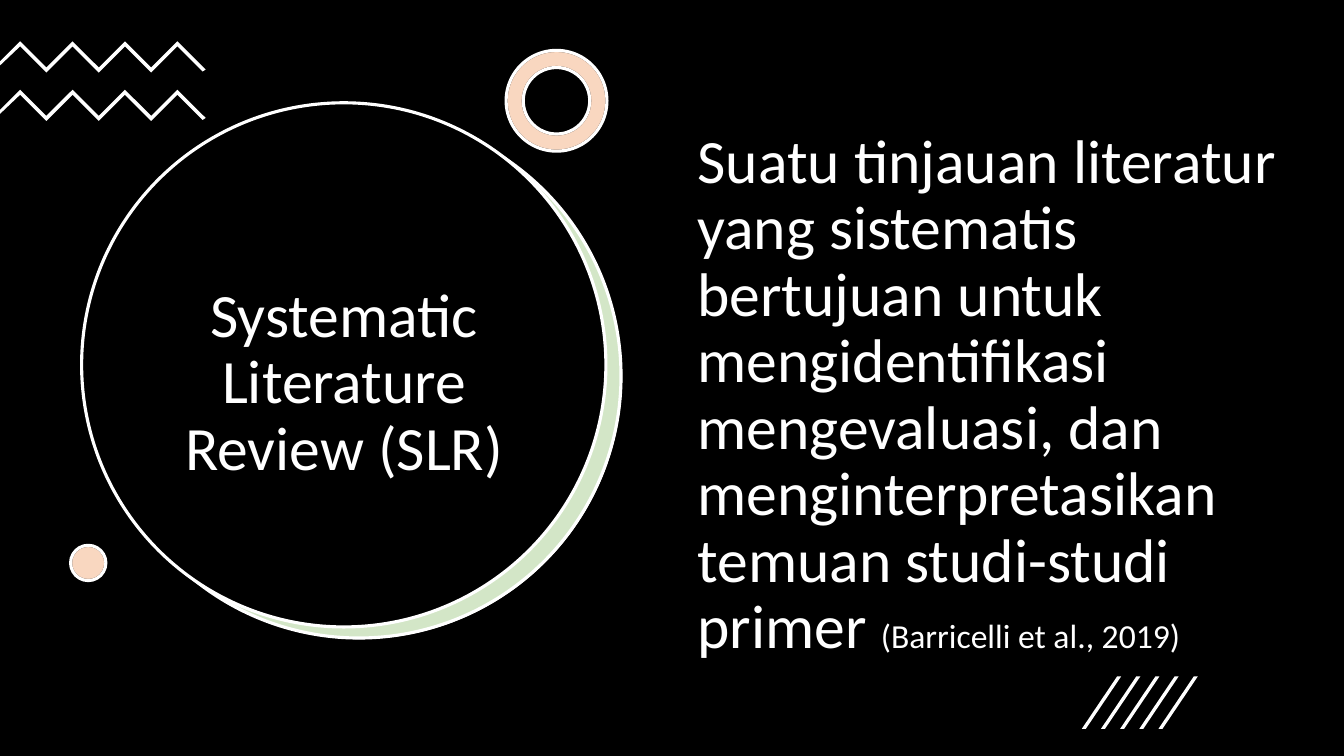
from lxml.etree import SubElement
from pptx import Presentation
from pptx.dml.color import RGBColor
from pptx.enum.shapes import MSO_SHAPE
from pptx.enum.text import MSO_ANCHOR, MSO_AUTO_SIZE, PP_ALIGN
from pptx.oxml.ns import qn
from pptx.util import Inches, Pt

BLACK = RGBColor(0x00, 0x00, 0x00)
WHITE = RGBColor(0xFF, 0xFF, 0xFF)
GREEN = RGBColor(0x70, 0xAD, 0x47)
ORANGE = RGBColor(0xED, 0x7D, 0x31)


def add_text(paragraph, text, font="Calibri", size=44, color=WHITE):
    run = paragraph.add_run()
    run.text = text
    run.font.name = font
    run.font.size = Pt(size)
    run.font.color.rgb = color


class SlideBuilder:
    line_width = Pt(2.25)
    line_spacing = 0.9

    def __init__(self, presentation):
        self.slide = presentation.slides.add_slide(presentation.slide_layouts[5])
        background = self.slide.background.fill
        background.solid()
        background.fore_color.rgb = BLACK

    def paint(self, shape, fill, line=None, opacity=None):
        shape.shadow.inherit = False
        shape.fill.solid()
        shape.fill.fore_color.rgb = fill
        if opacity is not None:
            color = shape._element.spPr.find(qn("a:solidFill"))[0]
            SubElement(color, qn("a:alpha"), val=str(opacity * 1000))
        if line is None:
            shape.line.fill.background()
        else:
            shape.line.color.rgb = line
            shape.line.width = self.line_width

    def round_shape(self, kind, left, top, size, fill, line=None, opacity=None, ring=None):
        shape = self.slide.shapes.add_shape(
            kind, Inches(left), Inches(top), Inches(size), Inches(size))
        if ring is not None:
            shape.adjustments[0] = ring
        self.paint(shape, fill, line, opacity)

    def tinted_shape(self, kind, left, top, size, tint, ring=None):
        self.round_shape(kind, left, top, size, WHITE, BLACK, ring=ring)
        self.round_shape(kind, left, top, size, tint, WHITE, 30, ring)

    def outline_group(self, outlines):
        group = self.slide.shapes.add_group_shape()
        for outline in outlines:
            points = [(Inches(x), Inches(y)) for x, y in outline]
            builder = group.shapes.build_freeform(*points[0])
            builder.add_line_segments(points[1:], close=True)
            self.paint(builder.convert_to_shape(), WHITE)

    def format_box(self, shape, left, top, width, height, anchor, alignment):
        shape.left, shape.top = Inches(left), Inches(top)
        shape.width, shape.height = Inches(width), Inches(height)
        frame = shape.text_frame
        frame.word_wrap = True
        frame.auto_size = MSO_AUTO_SIZE.NONE
        frame.vertical_anchor = anchor
        paragraph = frame.paragraphs[0]
        paragraph.alignment = alignment
        paragraph.line_spacing = self.line_spacing
        return paragraph

    def title(self, text, *box):
        shape = self.slide.shapes.title
        shape._element.getparent().append(shape._element)
        paragraph = self.format_box(shape, *box, MSO_ANCHOR.MIDDLE, PP_ALIGN.CENTER)
        add_text(paragraph, text)

    def body(self, text, citation, *box):
        shape = self.slide.shapes.add_textbox(0, 0, 0, 0)
        paragraph = self.format_box(shape, *box, MSO_ANCHOR.TOP, PP_ALIGN.LEFT)
        add_text(paragraph, text)
        add_text(paragraph, citation, size=24)


def zigzag(top):
    ridge = [(0.2 + 0.26 * i, top + 0.26 * (i % 2)) for i in range(7)]
    underside = [(x, y + 0.05) for x, y in reversed(ridge)]
    right_end = [(2.04, top + 0.28), (2.01, top + 0.3)]
    left_end = [(0, top + 0.24), (0, top + 0.2)]
    return ridge + right_end + underside + left_end


def slash(left):
    return [(left + 0.04, 7.23), (left, 7.23), (left + 0.35, 6.71), (left + 0.39, 6.71)]


def main():
    presentation = Presentation()
    presentation.slide_width = Inches(13.33)
    presentation.slide_height = Inches(7.5)

    builder = SlideBuilder(presentation)
    builder.round_shape(MSO_SHAPE.OVAL, 0.97, 1.14, 5.2, WHITE)
    builder.round_shape(MSO_SHAPE.OVAL, 0.96, 1.13, 5.2, GREEN, WHITE, 30)
    builder.round_shape(MSO_SHAPE.OVAL, 0.81, 1.02, 5.2, BLACK, WHITE)
    builder.title("Systematic Literature Review (SLR)", 1.21, 2.05, 4.41, 3.52)
    builder.outline_group(zigzag(top) for top in (0.41, 0.89))
    builder.tinted_shape(MSO_SHAPE.DONUT, 5.02, 0.5, 1, ORANGE, ring=0.17)
    builder.tinted_shape(MSO_SHAPE.OVAL, 0.7, 5.41, 0.35, ORANGE)
    builder.body(
        "Suatu tinjauan literatur yang sistematis bertujuan untuk mengidentifikasi "
        "mengevaluasi, dan menginterpretasikan temuan studi-studi primer ",
        "(Barricelli et al., 2019)", 6.82, 1.24, 6.23, 5.48)
    builder.outline_group(slash(10.73 + 0.19 * i) for i in range(5))

    presentation.save("out.pptx")


if __name__ == "__main__":
    main()
